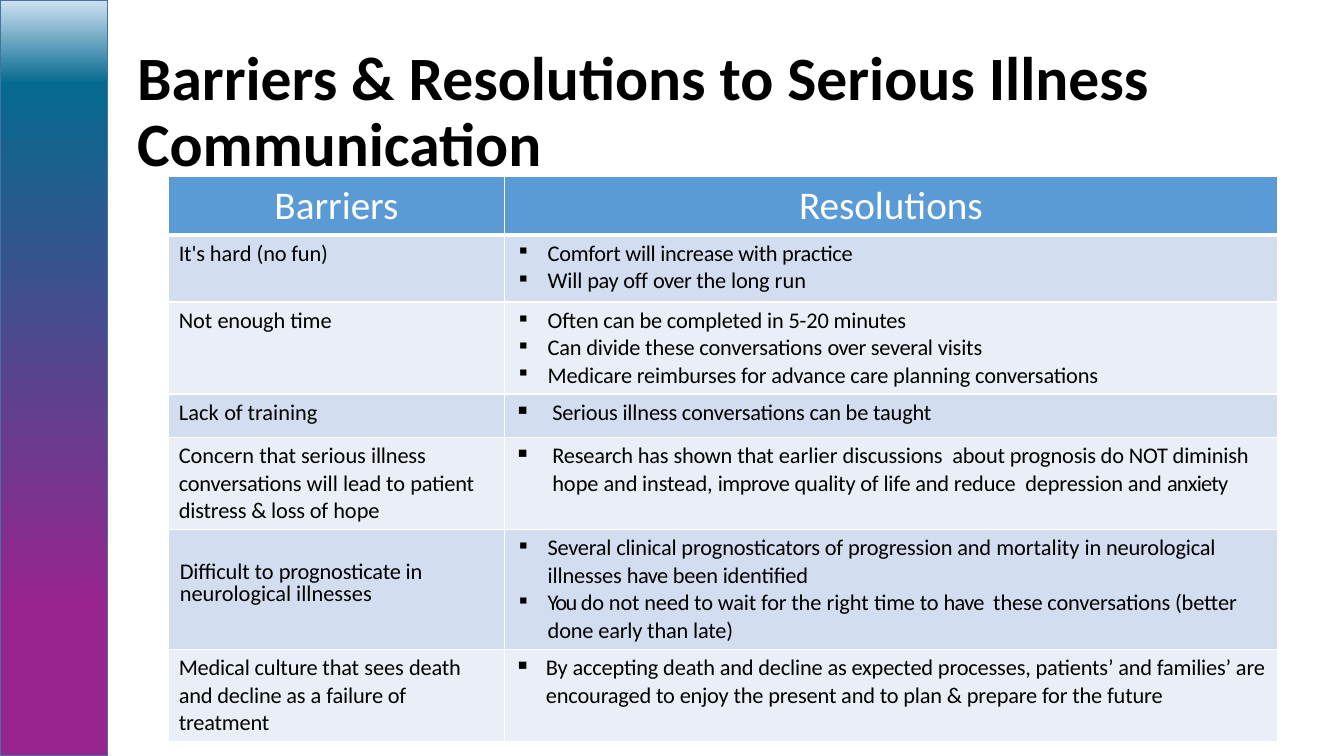
"""Build the slide on barriers and resolutions to serious illness communication."""
from copy import deepcopy
from dataclasses import dataclass
from typing import Optional

from lxml import etree
from pptx import Presentation
from pptx.dml.color import RGBColor
from pptx.enum.shapes import MSO_SHAPE
from pptx.enum.text import MSO_ANCHOR, PP_ALIGN
from pptx.oxml.ns import qn
from pptx.util import Pt

RECTANGLE = MSO_SHAPE.RECTANGLE
MIDDLE = MSO_ANCHOR.MIDDLE
CENTER = PP_ALIGN.CENTER
LEFT = PP_ALIGN.LEFT


@dataclass(frozen=True)
class Theme:
    font: str = "Calibri"
    title_size: float = 44
    header_size: float = 28
    body_size: float = 16
    ink: str = "000000"
    paper: str = "FFFFFF"
    header_fill: str = "5B9BD5"
    bands: tuple = ("D2DEEF", "EAEFF7")
    sidebar_line: str = "43739E"
    sidebar_stops: tuple = ((0.20, "98258F"), (0.89, "056A8F"), (1.0, "CEE1F2"))


@dataclass(frozen=True)
class Span:
    text: str
    tracking: float = -0.1


@dataclass(frozen=True)
class Bullet:
    margin: float
    hanging: float
    percent: int = 100


@dataclass(frozen=True)
class Row:
    height: float
    barrier: list[Span]
    resolutions: list[list[Span]]
    bullet: Bullet
    barrier_top: float = 3.6
    barrier_leading: float = 1.0
    barrier_left: float = 7.2


THEME = Theme()
LIST = Bullet(23.75, 22.3, 84)
WIDE = Bullet(27, 27)
CLOSING = Bullet(22.5, 22.5)
TITLE = "Barriers & Resolutions to Serious Illness Communication"
HEADERS = ("Barriers", "Resolutions")
HEADER_HEIGHT = 41.5
COLUMN_WIDTHS = (239.8, 552.2)
ROWS = [
    Row(48, [Span("It's "), Span("hard ", 0), Span("(no fun)")],
        [[Span("Comfort will increase with practice", -0.2)],
         [Span("Will "), Span("pay ", -0.3), Span("off "), Span("over ", -0.4),
          Span("the long "), Span("run", 0.1)]], LIST),
    Row(65.8, [Span("Not ", 0), Span("enough "), Span("time", 0)],
        [[Span("Often can be completed in 5-20 minutes")],
         [Span("Can divide these conversations "), Span("over ", -0.4),
          Span("several ", -0.2), Span("visits")],
         [Span("Medicare reimburses for advance care planning conversations")]], LIST),
    Row(31, [Span("Lack ", 0.1), Span("of "), Span("training", 0)],
        [[Span("Serious illness conversations can be taught")]], WIDE),
    Row(65.8, [Span("Concern ", 0), Span("that "), Span("serious ", 0),
               Span("illness conversations "), Span("will ", 0), Span("lead "),
               Span("to ", 0), Span("patient distress & loss of "), Span("hope", 0)],
        [[Span("Research has "), Span("shown ", -0.2), Span("that "),
          Span("earlier ", 0),
          Span("discussions  about prognosis do NOT diminish "), Span("hope ", 0),
          Span("and instead, "), Span("improve ", -0.3),
          Span("quality of life and reduce  depression and "),
          Span("anxiety", -0.5)]], WIDE),
    Row(85.5, [Span("Difficult "), Span("to ", 0), Span("prognosticate in "),
               Span("neurological illnesses", 0)],
        [[Span("Several ", -0.2),
          Span("clinical prognosticators of progression and "),
          Span("mortality ", 0), Span("in neurological illnesses "),
          Span("have ", -0.4), Span("been identified")],
         [Span("You ", -1.1), Span("do not need to wait for the "),
          Span("right ", 0), Span("time to "), Span("have  ", -0.5),
          Span("these conversations (better done early than late)")]],
        LIST, barrier_top=23.5, barrier_leading=0.8, barrier_left=8),
    Row(65.8, [Span("Medical culture that "), Span("sees ", 0),
               Span("death and decline as "), Span("a ", 0),
               Span("failure of treatment")],
        [[Span("By accepting death and decline as expected processes, patients’ "
               "and families’ are encouraged to "), Span("enjoy ", -0.2),
          Span("the present and to plan & prepare for the future")]], CLOSING),
]


def rgb(value: str) -> RGBColor:
    return RGBColor.from_string(value)


def add_spans(paragraph, spans: list[Span], size: float, color: str,
              bold: bool = False) -> None:
    for span in spans:
        run = paragraph.add_run()
        run.text = span.text
        run.font.name = THEME.font
        run.font.size = Pt(size)
        run.font.bold = bold
        run.font.color.rgb = rgb(color)
        if span.tracking:
            run.font._element.set("spc", str(round(span.tracking * 100)))


def add_bullet(paragraph, bullet: Bullet) -> None:
    properties = paragraph._p.get_or_add_pPr()
    properties.set("marL", str(Pt(bullet.margin)))
    properties.set("indent", str(-Pt(bullet.hanging)))
    etree.SubElement(properties, qn("a:buSzPct"), val=str(bullet.percent * 1000))
    etree.SubElement(properties, qn("a:buChar"), char="▪")


def style_cell(cell, fill: str, bottom: float = 1, top: float = 1) -> None:
    cell.fill.solid()
    cell.fill.fore_color.rgb = rgb(fill)
    properties = cell._tc.get_or_add_tcPr()
    edges = (("L", 1), ("R", 1), ("T", top), ("B", bottom))
    for index, (side, width) in enumerate(edges):
        edge = etree.Element(qn(f"a:ln{side}"), w=str(Pt(width)))
        solid = etree.SubElement(edge, qn("a:solidFill"))
        etree.SubElement(solid, qn("a:srgbClr"), val=THEME.paper)
        properties.insert(index, edge)


def fill_cell(cell, paragraphs: list[list[Span]], size: float, color: str,
              align=LEFT, bullet: Optional[Bullet] = None) -> None:
    frame = cell.text_frame
    for index, spans in enumerate(paragraphs):
        paragraph = frame.add_paragraph() if index else frame.paragraphs[0]
        paragraph.alignment = align
        if bullet:
            add_bullet(paragraph, bullet)
        add_spans(paragraph, spans, size, color)


def add_sidebar(slide) -> None:
    sidebar = slide.shapes.add_shape(RECTANGLE, 0, 0, Pt(77), Pt(540))
    sidebar.shadow.inherit = False
    sidebar.line.color.rgb = rgb(THEME.sidebar_line)
    sidebar.line.width = Pt(1)
    sidebar.fill.gradient()
    sidebar.fill.gradient_angle = 90
    stop_list = sidebar._element.spPr.find(".//" + qn("a:gsLst"))
    stop_list.append(deepcopy(stop_list[-1]))
    for stop, (position, color) in zip(sidebar.fill.gradient_stops, THEME.sidebar_stops):
        stop.position = position
        stop.color.rgb = rgb(color)


def add_title(slide) -> None:
    title = slide.shapes.add_textbox(Pt(90.8), Pt(28.8), Pt(838), Pt(104.4))
    frame = title.text_frame
    frame.word_wrap = True
    frame.vertical_anchor = MIDDLE
    frame.paragraphs[0].line_spacing = 0.9
    add_spans(frame.paragraphs[0], [Span(TITLE, 0)], THEME.title_size, THEME.ink, True)


def add_barrier_table(slide) -> None:
    height = HEADER_HEIGHT + sum(row.height for row in ROWS)
    table = slide.shapes.add_table(len(ROWS) + 1, len(HEADERS), Pt(120.5), Pt(126.2),
                                   Pt(sum(COLUMN_WIDTHS)), Pt(height)).table
    table.horz_banding = False
    for column, width in zip(table.columns, COLUMN_WIDTHS):
        column.width = Pt(width)
    table.rows[0].height = Pt(HEADER_HEIGHT)
    for index, header in enumerate(HEADERS):
        cell = table.cell(0, index)
        style_cell(cell, THEME.header_fill, bottom=3)
        fill_cell(cell, [[Span(header, 0)]], THEME.header_size, THEME.paper, CENTER)
    for index, row in enumerate(ROWS, start=1):
        table.rows[index].height = Pt(row.height)
        barrier, resolution = table.cell(index, 0), table.cell(index, 1)
        for cell in (barrier, resolution):
            style_cell(cell, THEME.bands[(index - 1) % 2], top=3 if index == 1 else 1)
        barrier.margin_top = Pt(row.barrier_top)
        barrier.margin_left = Pt(row.barrier_left)
        fill_cell(barrier, [row.barrier], THEME.body_size, THEME.ink)
        barrier.text_frame.paragraphs[0].line_spacing = row.barrier_leading
        fill_cell(resolution, row.resolutions, THEME.body_size, THEME.ink, LEFT, row.bullet)


def main() -> None:
    deck = Presentation()
    deck.slide_width, deck.slide_height = Pt(960), Pt(540)
    slide = deck.slides.add_slide(deck.slide_layouts[6])
    add_sidebar(slide)
    add_title(slide)
    add_barrier_table(slide)
    deck.save("out.pptx")


if __name__ == "__main__":
    main()
